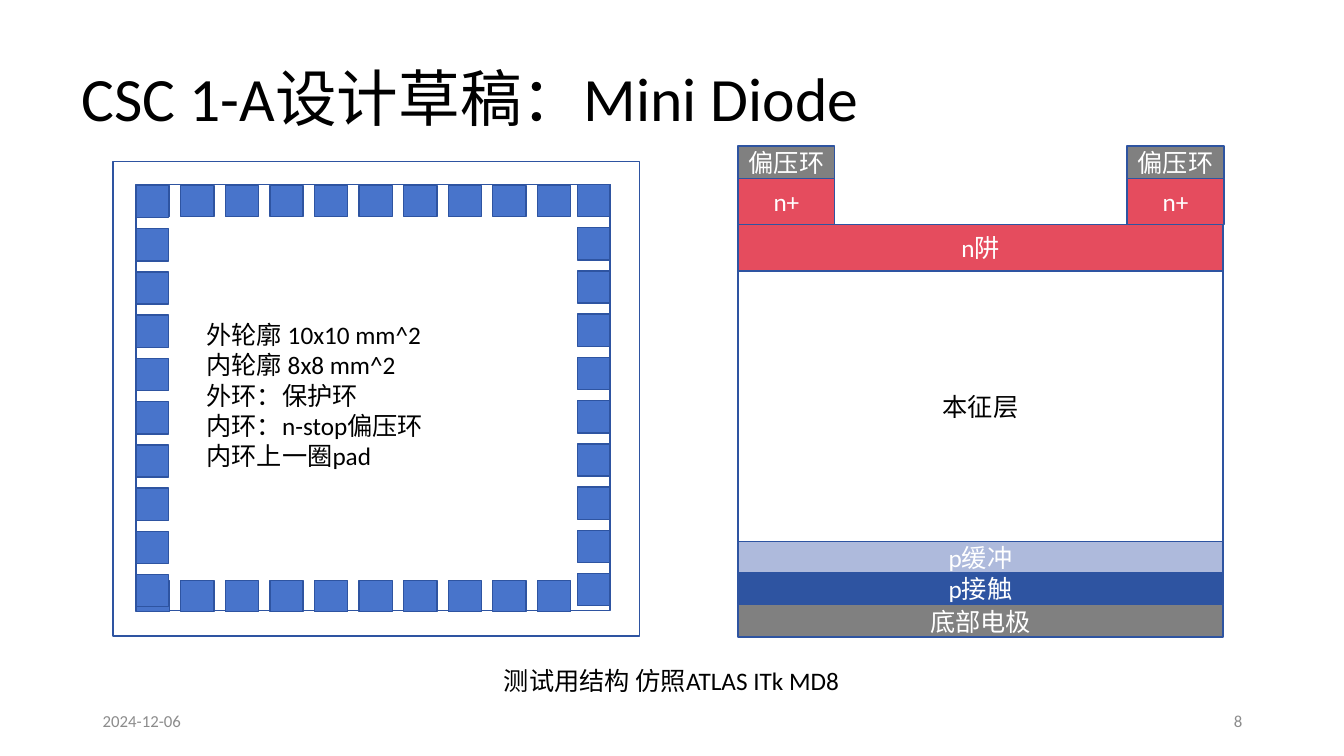
from pptx import Presentation
from pptx.dml.color import RGBColor
from pptx.enum.shapes import MSO_SHAPE as Shape
from pptx.enum.text import MSO_ANCHOR as Anchor, MSO_AUTO_SIZE as AutoSize, PP_ALIGN as Align
from pptx.util import Inches, Pt

COLORS = {
    "black": "000000",
    "white": "FFFFFF",
    "muted": "8C8C8C",
    "outline": "2E54A1",
    "pad": "4874CB",
    "n_type": "E54C5E",
    "buffer": "AEBADC",
    "metal": "808080",
}


class SlideBuilder:
    font = "Calibri"

    def __init__(self, slide):
        self.slide = slide

    def color(self, name):
        return RGBColor.from_string(COLORS[name])

    def fill_text(self, frame, lines, size, color, align, spacing=None):
        frame.word_wrap = True
        for index, line in enumerate(lines):
            paragraph = frame.paragraphs[0] if index == 0 else frame.add_paragraph()
            paragraph.text = line
            paragraph.alignment = align
            paragraph.line_spacing = spacing
            paragraph.font.name = self.font
            paragraph.font.size = Pt(size)
            paragraph.font.color.rgb = self.color(color)

    def text(self, place, lines, size=18, color="black", align=Align.LEFT,
             anchor=Anchor.MIDDLE, grow=False, spacing=None):
        box = self.slide.shapes.add_textbox(*map(Inches, place))
        frame = box.text_frame
        self.fill_text(frame, lines, size, color, align, spacing)
        frame.vertical_anchor = anchor
        if grow:
            frame.auto_size = AutoSize.SHAPE_TO_FIT_TEXT

    def rectangle(self, place, fill=None, label=None, color="white", parent=None):
        shapes = (parent or self.slide).shapes
        box = shapes.add_shape(Shape.RECTANGLE, *map(Inches, place))
        box.shadow.inherit = False
        if fill:
            box.fill.solid()
            box.fill.fore_color.rgb = self.color(fill)
        else:
            box.fill.background()
        box.line.color.rgb = self.color("outline")
        box.line.width = Pt(1)
        if label:
            self.fill_text(box.text_frame, [label], 18, color, Align.CENTER)
            box.text_frame.vertical_anchor = Anchor.MIDDLE

    def pad_line(self, left, top, width, height, step_x=0, step_y=0, count=10):
        group = self.slide.shapes.add_group_shape()
        for index in range(count):
            place = (left + index * step_x, top + index * step_y, width, height)
            self.rectangle(place, "pad", parent=group)


def draw_top_view(builder):
    builder.rectangle((1.35, 1.83, 4.7, 4.23))
    builder.rectangle((1.12, 1.6, 5.22, 4.71))
    builder.text(
        (1.95, 3.12, 3.54, 1.61),
        ["外轮廓 10x10 mm^2", "内轮廓 8x8 mm^2", "外环：保护环",
         "内环：n-stop偏压环", "内环上一圈pad"],
        anchor=Anchor.TOP, grow=True,
    )
    row_step, column_step = 3.98 / 9, 3.86 / 9
    builder.pad_line(1.35, 1.84, 0.33, 0.31, step_x=row_step)
    builder.pad_line(5.73, 1.83, 0.32, 0.32, step_y=column_step)
    builder.pad_line(1.35, 5.76, 0.33, 0.31, step_x=row_step)
    builder.pad_line(1.35, 1.84, 0.32, 0.32, step_y=column_step)


def draw_cross_section(builder):
    left, width, contact_width = 7.32, 4.81, 0.96
    layers = [
        (2.23, 0.46, "n_type", "n阱", "white"),
        (2.69, 2.68, "white", "本征层", "black"),
        (5.37, 0.32, "buffer", "p缓冲", "white"),
        (5.68, 0.32, "outline", "p接触", "white"),
        (6, 0.32, "metal", "底部电极", "white"),
    ]
    for top, height, fill, label, color in layers:
        builder.rectangle((left, top, width, height), fill, label, color)
    contacts = [(1.77, 0.46, "n_type", "n+"), (1.45, 0.32, "metal", "偏压环")]
    for top, height, fill, label in contacts:
        for contact_left in (left, 11.18):
            builder.rectangle((contact_left, top, contact_width, height), fill, label)


def main():
    deck = Presentation()
    deck.slide_width, deck.slide_height = Inches(13.33), Inches(7.5)
    page = deck.slides.add_slide(deck.slide_layouts[6])
    builder = SlideBuilder(page)

    draw_top_view(builder)
    builder.text((0.92, 6.95, 3, 0.4), ["2024-12-06"], 12, "muted")
    builder.text((9.42, 6.95, 3, 0.4), ["8"], 12, "muted", Align.RIGHT)
    draw_cross_section(builder)
    builder.text((0.71, 0.28, 11.5, 1.45), ["CSC 1-A设计草稿：Mini Diode"], 44, spacing=0.9)
    builder.text((4.44, 6.55, 4.44, 0.4), ["测试用结构 仿照ATLAS ITk MD8"],
                 align=Align.CENTER, anchor=Anchor.TOP, grow=True)

    deck.save("out.pptx")


if __name__ == "__main__":
    main()
